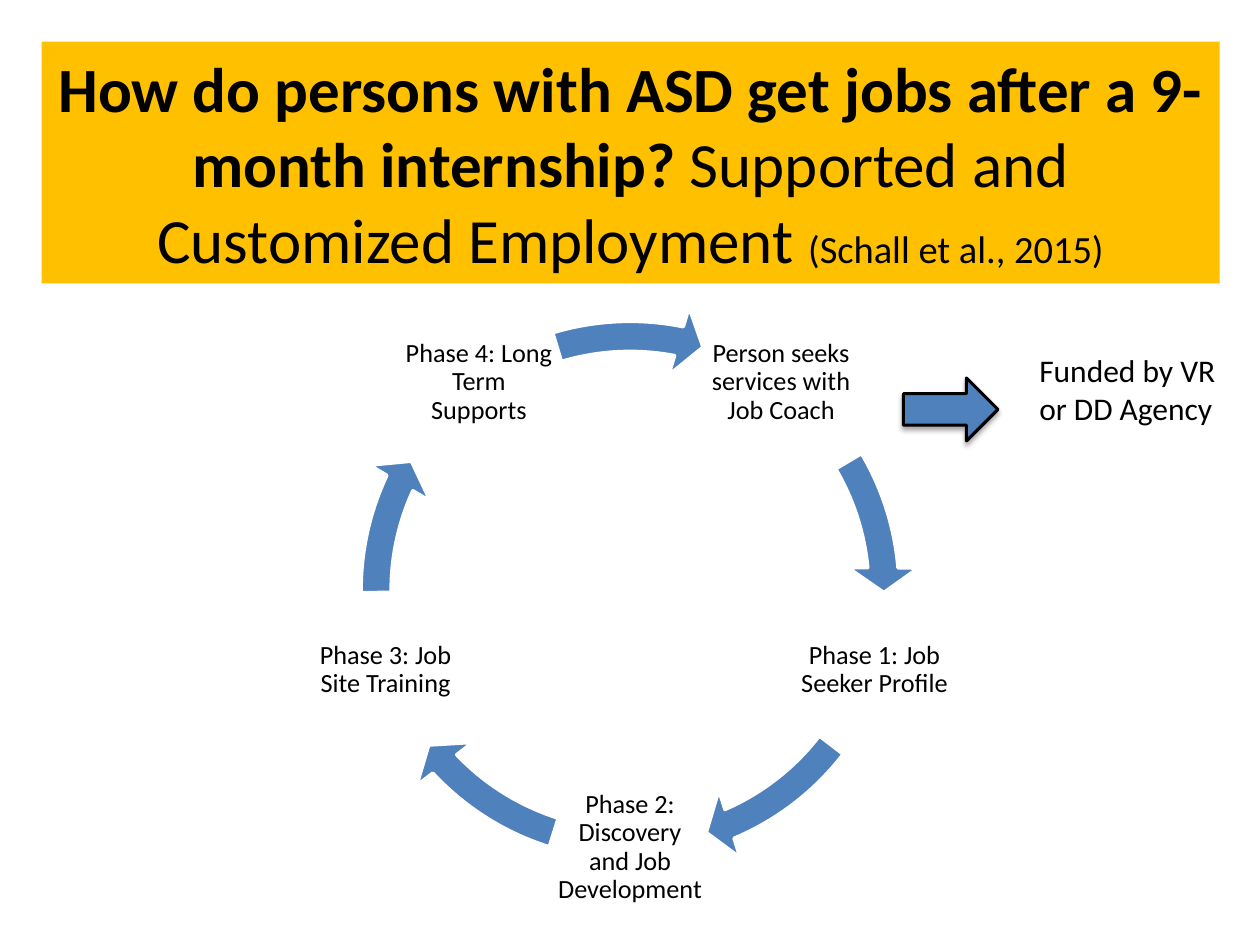
import math

import lxml.etree
import pptx
import pptx.dml.color
import pptx.enum.shapes
import pptx.enum.text
import pptx.oxml.ns
import pptx.util

RGBColor = pptx.dml.color.RGBColor
BLACK = RGBColor(0x00, 0x00, 0x00)
WHITE = RGBColor(0xFF, 0xFF, 0xFF)
GOLD = RGBColor(0xFF, 0xC0, 0x00)
BLUE = RGBColor(0x4F, 0x81, 0xBD)

COLUMNS, ROWS = 100, 75
CYCLE_CENTER = (50, 46.85)
STEP_RADIUS, STEP_SIZE = 20.4, 12.2
ARROW_SIZE = 45.9
FIRST_STEP_ANGLE = -54

# Each step with the start and end angle of the arrow that follows it.
STEPS = [
    ("Person seeks services with Job Coach", 329.43, 354.9),
    ("Phase 1: Job Seeker Profile", 37.55, 66.93),
    ("Phase 2: Discovery and Job Development", 107.48, 136.86),
    ("Phase 3: Job Site Training", 179.5, 204.98),
    ("Phase 4: Long Term Supports", 253.3, 281.11),
]


class SlideBuilder:
    """Holds the style and the current slide; lengths are grid columns and rows."""

    font_name = "Calibri"
    alignment = pptx.enum.text.PP_ALIGN
    shapes = pptx.enum.shapes.MSO_SHAPE

    def __init__(self, presentation):
        self.column = presentation.slide_width / COLUMNS
        self.row = presentation.slide_height / ROWS
        self.slide = presentation.slides.add_slide(presentation.slide_layouts[5])

    def box(self, left, top, width, height):
        return (int(left * self.column), int(top * self.row),
                int(width * self.column), int(height * self.row))

    def centered_box(self, center, size):
        return self.box(center[0] - size / 2, center[1] - size / 2, size, size)

    def add_run(self, paragraph, text, size, bold=False):
        run = paragraph.add_run()
        run.text = text
        run.font.name = self.font_name
        run.font.size = pptx.util.Pt(size)
        run.font.bold = bold
        run.font.color.rgb = BLACK

    def title(self, box, runs):
        title = self.slide.shapes.title
        title.left, title.top, title.width, title.height = box
        title.fill.solid()
        title.fill.fore_color.rgb = GOLD
        frame = title.text_frame
        frame.word_wrap = True
        frame.auto_size = pptx.enum.text.MSO_AUTO_SIZE.NONE
        frame.vertical_anchor = pptx.enum.text.MSO_ANCHOR.MIDDLE
        paragraph = frame.paragraphs[0]
        paragraph.alignment = self.alignment.CENTER
        for run in runs:
            self.add_run(paragraph, *run)

    def text(self, box, text, size):
        frame = self.slide.shapes.add_textbox(*box).text_frame
        frame.word_wrap = True
        self.add_run(frame.paragraphs[0], text, size)
        return frame

    def step(self, center, text):
        frame = self.text(self.centered_box(center, STEP_SIZE), text, 15)
        frame.vertical_anchor = pptx.enum.text.MSO_ANCHOR.MIDDLE
        inset = pptx.util.Inches(0.02)
        frame.margin_left = frame.margin_right = inset
        frame.margin_top = frame.margin_bottom = inset
        paragraph = frame.paragraphs[0]
        paragraph.alignment = self.alignment.CENTER
        paragraph.line_spacing = 0.9
        paragraph.space_after = pptx.util.Pt(5.25)

    def arrow(self, kind, box, line_color, line_width):
        arrow = self.slide.shapes.add_shape(kind, *box)
        arrow.shadow.inherit = False
        arrow.fill.solid()
        arrow.fill.fore_color.rgb = BLUE
        arrow.line.color.rgb = line_color
        arrow.line.width = pptx.util.Pt(line_width)
        return arrow

    def cycle_arrow(self, start, end):
        arrow = self.arrow(self.shapes.CIRCULAR_ARROW,
                           self.centered_box(CYCLE_CENTER, ARROW_SIZE), WHITE, 2)
        # Angles are stored in 1/60000 degree, adjustments in 1/100000.
        values = (0.052, 5.6 * 0.6, end * 0.6, start * 0.6, 0.061)
        for index, value in enumerate(values):
            arrow.adjustments[index] = value

    def shadowed_arrow(self, box):
        arrow = self.arrow(self.shapes.RIGHT_ARROW, box, BLACK, 1.75)
        qualified = pptx.oxml.ns.qn
        effects = arrow.element.spPr.find(qualified("a:effectLst"))
        shadow = lxml.etree.SubElement(
            effects, qualified("a:outerShdw"), blurRad=str(pptx.util.Pt(3.1)),
            dist=str(pptx.util.Pt(1.8)), dir="5400000", rotWithShape="0")
        color = lxml.etree.SubElement(shadow, qualified("a:srgbClr"), val=str(BLACK))
        lxml.etree.SubElement(color, qualified("a:alpha"), val="35000")


def main():
    presentation = pptx.Presentation()
    presentation.slide_width = pptx.util.Inches(10)
    presentation.slide_height = pptx.util.Inches(7.5)
    builder = SlideBuilder(presentation)

    builder.title(builder.box(3.3, 3.3, 93.5, 19.2), [
        ("How do persons with ASD get jobs after a 9-month internship? ", 36, True),
        ("Supported and Customized Employment ", 36),
        ("(Schall et al., 2015)", 22),
    ])
    builder.shadowed_arrow(builder.box(71.7, 30, 7.5, 5))
    builder.text(builder.box(81.5, 27.4, 16, 10.1), "Funded by VR or DD Agency", 18)

    for index, (text, start, end) in enumerate(STEPS):
        angle = math.radians(FIRST_STEP_ANGLE + index * 360 / len(STEPS))
        center = (CYCLE_CENTER[0] + STEP_RADIUS * math.cos(angle),
                  CYCLE_CENTER[1] + STEP_RADIUS * math.sin(angle))
        builder.step(center, text)
        builder.cycle_arrow(start, end)

    presentation.save("out.pptx")


if __name__ == "__main__":
    main()
